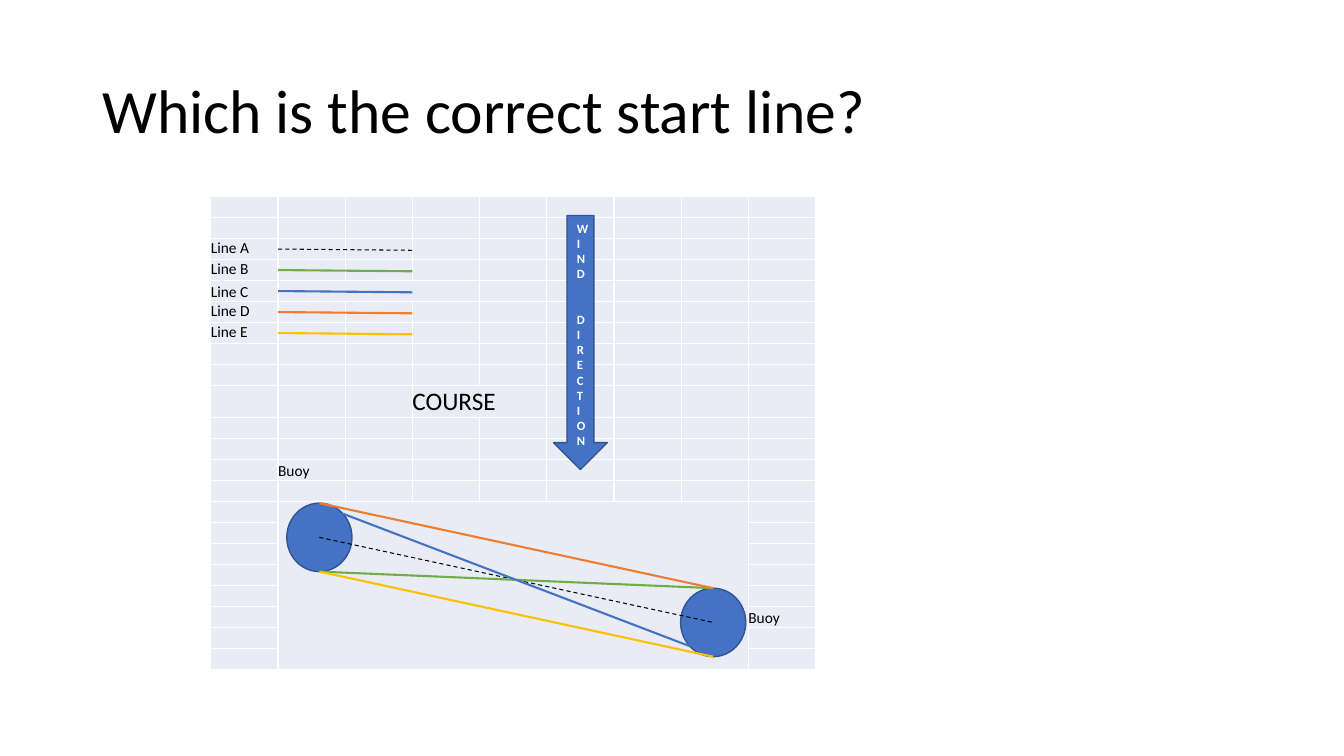
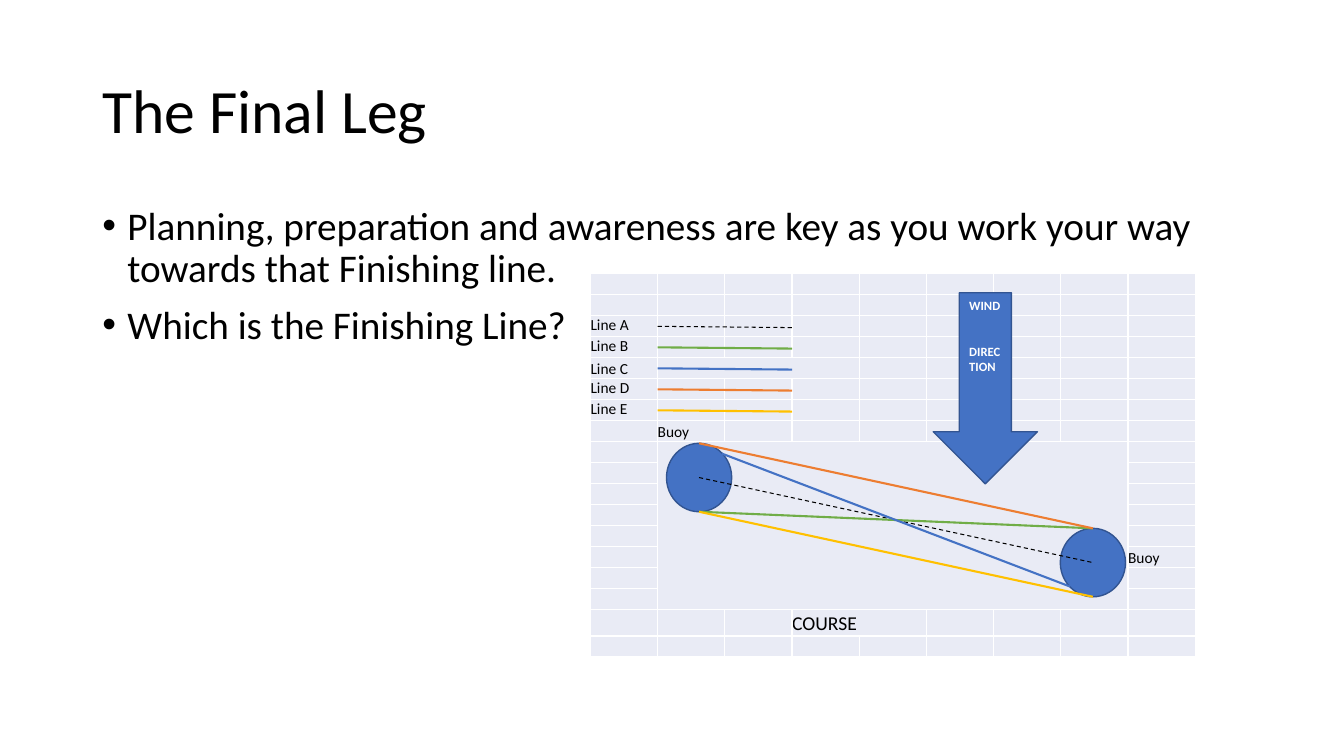
import itertools
from dataclasses import dataclass
from typing import Any, Optional

import pptx
import pptx.util
from pptx.dml.color import RGBColor
from pptx.enum.dml import MSO_LINE
from pptx.enum.shapes import MSO_CONNECTOR, MSO_SHAPE
from pptx.enum.text import MSO_ANCHOR, PP_ALIGN
from pptx.oxml import parse_xml
from pptx.oxml.ns import nsdecls

# Shared look
FONT = "Calibri"
BLACK = RGBColor(0x00, 0x00, 0x00)
WHITE = RGBColor(0xFF, 0xFF, 0xFF)
CELL = RGBColor(0xE9, 0xEB, 0xF5)
BLUE = RGBColor(0x44, 0x72, 0xC4)
NAVY = RGBColor(0x32, 0x54, 0x91)
GREEN = RGBColor(0x70, 0xAD, 0x47)
ORANGE = RGBColor(0xED, 0x7D, 0x31)
GOLD = RGBColor(0xFF, 0xC0, 0x00)

# Page grid of 80 x 45 squares, diagram grid of 9 columns
SLIDE_W, SLIDE_H = pptx.util.Inches(13.333), pptx.util.Inches(7.5)
SQUARE = SLIDE_H / 45
COLUMN, ROW = SQUARE * 4, SQUARE * 1.25
COLUMNS = 9
BASIN_ROWS, BASIN_COLUMNS = 8, 7
LEGEND_ROW = 2

TOP, BOTTOM, CENTRE = (0.5, 0), (0.5, 1), (0.5, 0.5)
TOP_RIGHT, BOTTOM_LEFT = (0.85, 0.15), (0.15, 0.85)
NO_INSETS = dict.fromkeys(("margin_left", "margin_top", "margin_right", "margin_bottom"), 0)


@dataclass(frozen=True)
class StartLine:
    """A line between the buoys; its ends are shares of each buoy's box."""
    name: str
    color: RGBColor
    start: tuple[float, float]
    end: tuple[float, float]
    dashed: bool = False
    anchor: MSO_ANCHOR = MSO_ANCHOR.TOP


@dataclass(frozen=True)
class Label:
    text: str
    row: int
    column: int
    size: int = 11
    anchor: MSO_ANCHOR = MSO_ANCHOR.BOTTOM


@dataclass(frozen=True)
class Diagram:
    """Place in page squares; the rest in diagram columns and rows."""
    left: float
    top: float
    rows: int
    basin_row: int
    buoy_row: int
    course_row: int
    course_height: float
    course_size: int
    arrow_width: float
    arrow_height: float

    def x(self, column: float) -> int:
        return round(self.left * SQUARE + column * COLUMN)

    def y(self, row: float) -> int:
        extra = self.course_height - 1 if row > self.course_row else 0
        return round(self.top * SQUARE + (row + extra) * ROW)


@dataclass(frozen=True)
class Lesson:
    title: str
    bullets: tuple[str, ...]
    diagram: Diagram


START_LINES = (
    StartLine("Line A", BLACK, CENTRE, CENTRE, dashed=True),
    StartLine("Line B", GREEN, BOTTOM, TOP),
    StartLine("Line C", BLUE, TOP_RIGHT, BOTTOM_LEFT, anchor=MSO_ANCHOR.BOTTOM),
    StartLine("Line D", ORANGE, TOP, TOP),
    StartLine("Line E", GOLD, BOTTOM, BOTTOM),
)
LESSONS = (
    Lesson("Which is the correct start line?", (),
           Diagram(12.55, 11.7, 22, 14, 12, 9, 1.53, 18, 0.8, 12.1)),
    Lesson("The Final Leg",
           ("Planning, preparation and awareness are key as you work your way "
            "towards that Finishing line.",
            "Which is the Finishing Line?"),
           Diagram(35.15, 16.3, 18, 8, 7, 16, 1.25, 14, 1.55, 9.1)),
)


def apply(target: Any, formats: dict[str, Any]) -> None:
    for name, value in formats.items():
        setattr(target, name, value)


def write(para: Any, text: str, size: int, color: RGBColor = BLACK, bold: bool = False) -> None:
    span = para.add_run()
    span.text = text
    apply(span.font, {"name": FONT, "size": pptx.util.Pt(size), "bold": bold})
    span.font.color.rgb = color


def add_text(page: Any, top: float, height: float, texts: tuple[str, ...], size: int,
             anchor: MSO_ANCHOR, bullets: bool = False) -> None:
    place = (round(value * SQUARE) for value in (5.5, top, 69, height))
    frame = page.shapes.add_textbox(*place).text_frame
    apply(frame, {"word_wrap": True, "vertical_anchor": anchor})
    for index, text in enumerate(texts):
        para = frame.add_paragraph() if index else frame.paragraphs[0]
        para.line_spacing = 0.9
        write(para, text, size)
        if bullets:
            para.space_before = pptx.util.Pt(10)
            props = para._p.get_or_add_pPr()
            indent = pptx.util.Inches(0.25)
            props.set("marL", str(indent))
            props.set("indent", str(-indent))
            props.append(parse_xml(f'<a:buFont {nsdecls("a")} typeface="Arial"/>'))
            props.append(parse_xml(f'<a:buChar {nsdecls("a")} char="•"/>'))


def format_cell(cell: Any) -> None:
    apply(cell, NO_INSETS)
    props = cell._tc.get_or_add_tcPr()
    for side in "LRTB":
        props.append(parse_xml(
            f'<a:ln{side} {nsdecls("a")} w="12700"><a:solidFill>'
            f'<a:srgbClr val="{WHITE}"/></a:solidFill></a:ln{side}>'))
    cell.fill.solid()
    cell.fill.fore_color.rgb = CELL
    # Small empty text keeps the rows low
    cell.text_frame.paragraphs[0]._p.get_or_add_endParaRPr().set("sz", "800")


def add_field(page: Any, plan: Diagram) -> None:
    table = page.shapes.add_table(
        plan.rows, COLUMNS, plan.x(0), plan.y(0),
        round(COLUMNS * COLUMN), plan.y(plan.rows) - plan.y(0)).table
    apply(table, {"first_row": False, "horz_banding": False})
    for column in table.columns:
        column.width = round(COLUMN)
    for index, row in enumerate(table.rows):
        row.height = round(ROW * (plan.course_height if index == plan.course_row else 1))
    for row, column in itertools.product(range(plan.rows), range(COLUMNS)):
        format_cell(table.cell(row, column))

    # Merged areas: row, column, rows, columns
    for row, column, height, width in (
            (LEGEND_ROW + 2, 1, 1, 3),
            (plan.course_row, 3, 1, 2),
            (plan.basin_row, 1, BASIN_ROWS, BASIN_COLUMNS)):
        table.cell(row, column).merge(table.cell(row + height - 1, column + width - 1))

    labels = [Label(line.name, LEGEND_ROW + index, 0, anchor=line.anchor)
              for index, line in enumerate(START_LINES)]
    labels += [Label("Buoy", plan.buoy_row, 1),
               Label("Buoy", plan.basin_row + 5, 8),
               Label("COURSE", plan.course_row, 3, plan.course_size)]
    for label in labels:
        cell = table.cell(label.row, label.column)
        cell.vertical_anchor = label.anchor
        write(cell.text_frame.paragraphs[0], label.text, label.size)


def add_shape(page: Any, kind: MSO_SHAPE, left: int, top: int,
              columns: float, rows: float) -> Any:
    shape = page.shapes.add_shape(kind, left, top, round(columns * COLUMN), round(rows * ROW))
    shape.shadow.inherit = False
    shape.fill.solid()
    shape.fill.fore_color.rgb = BLUE
    shape.line.color.rgb = NAVY
    shape.line.width = pptx.util.Pt(1)
    return shape


def add_line(page: Any, line: StartLine, start: tuple[int, int], end: tuple[int, int]) -> Any:
    connector = page.shapes.add_connector(MSO_CONNECTOR.STRAIGHT, *start, *end)
    connector.line.color.rgb = line.color
    connector.line.width = pptx.util.Pt(0.75 if line.dashed else 1.5)
    if line.dashed:
        connector.line.dash_style = MSO_LINE.DASH
    connector._element.spPr.append(parse_xml(f'<a:effectLst {nsdecls("a")}/>'))
    return connector


def point_on(shape: Any, share: tuple[float, float]) -> tuple[int, int]:
    return (round(shape.left + share[0] * shape.width),
            round(shape.top + share[1] * shape.height))


def add_diagram(page: Any, plan: Diagram) -> None:
    add_field(page, plan)

    # Legend
    for row, line in enumerate(START_LINES, LEGEND_ROW):
        add_line(page, line, (plan.x(1), plan.y(row + 0.5)), (plan.x(3), plan.y(row + 0.56)))

    # Wind arrow
    arrow = add_shape(page, MSO_SHAPE.DOWN_ARROW, plan.x(5.1), plan.y(0.9),
                      plan.arrow_width, plan.arrow_height)
    frame = arrow.text_frame
    apply(frame, {"word_wrap": True, "vertical_anchor": MSO_ANCHOR.TOP})
    for para, word, gap in ((frame.paragraphs[0], "WIND", 0),
                            (frame.add_paragraph(), "DIRECTION", 22)):
        apply(para, {"alignment": PP_ALIGN.LEFT, "space_before": pptx.util.Pt(gap)})
        write(para, word, 9, WHITE, bold=True)

    # Buoys and the lines between them
    near, far = (
        add_shape(page, MSO_SHAPE.OVAL, plan.x(column), plan.y(plan.basin_row + row), 0.97, 3.26)
        for column, row in ((1.13, 0.07), (6.99, 4.12)))
    for line in START_LINES:
        connector = add_line(page, line, point_on(near, line.start), point_on(far, line.end))
        if line.start == TOP:
            connector.begin_connect(near, 0)
        if line.end == TOP:
            connector.end_connect(far, 0)


def main() -> None:
    deck = pptx.Presentation()
    apply(deck, {"slide_width": SLIDE_W, "slide_height": SLIDE_H})
    for lesson in LESSONS:
        page = deck.slides.add_slide(deck.slide_layouts[6])
        add_text(page, 2.4, 8.7, (lesson.title,), 44, MSO_ANCHOR.MIDDLE)
        if lesson.bullets:
            add_text(page, 12, 28.55, lesson.bullets, 28, MSO_ANCHOR.TOP, bullets=True)
        add_diagram(page, lesson.diagram)
    deck.save("out.pptx")


if __name__ == "__main__":
    main()
